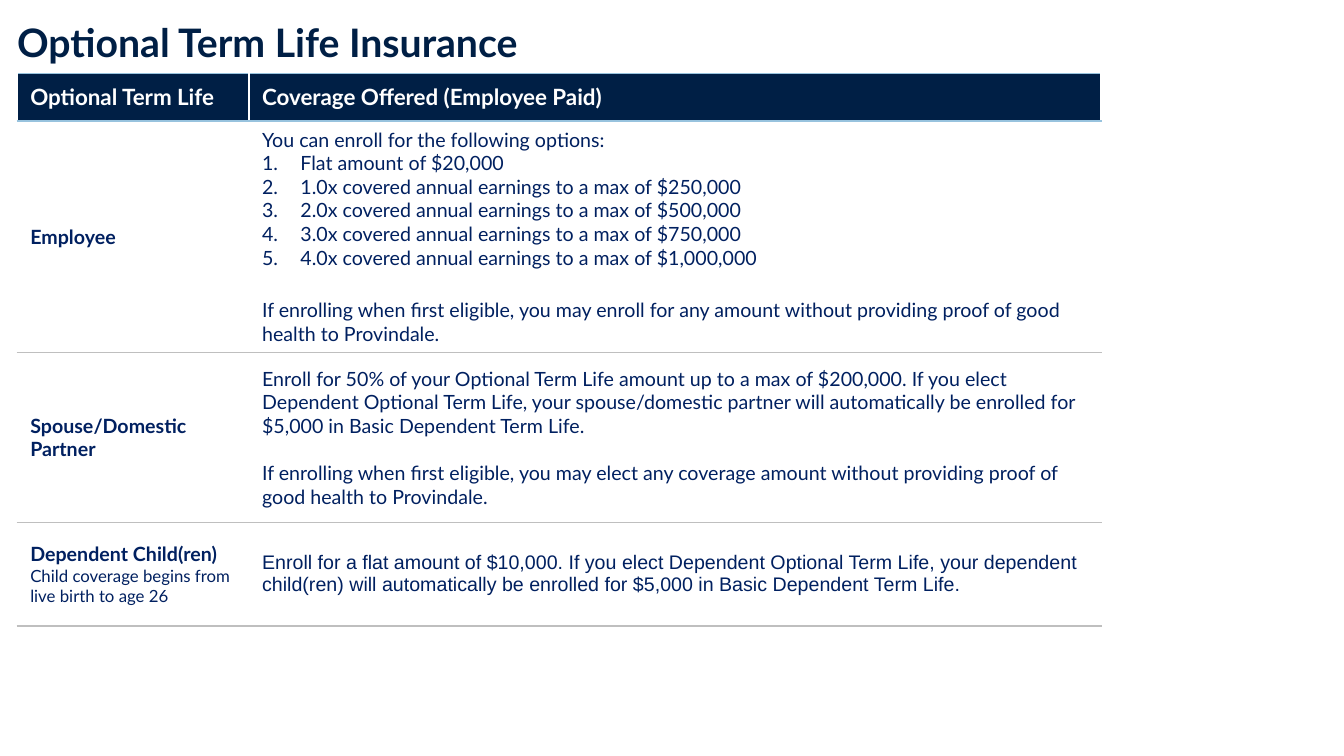
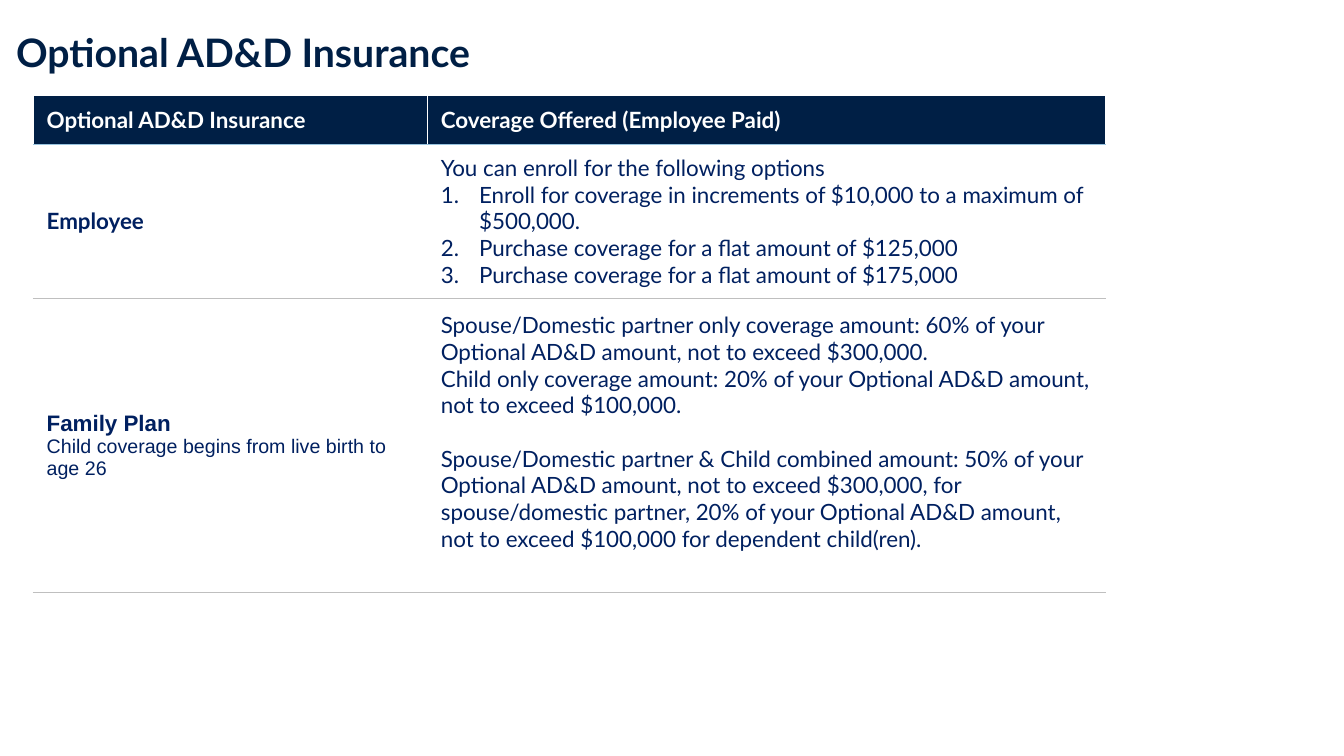
from pptx import Presentation, util as u
from pptx.dml.color import RGBColor
from pptx.enum import text as tx
from pptx.oxml import parse_xml
from pptx.oxml.ns import nsdecls

# Shared style
NAVY, INK, WHITE, SKY, GREY = "001F45", "002060", "FFFFFF", "98C3DE", "BFBFBF"
LATO, ARIAL = "Lato", "Arial"
WIDE, HIGH = u.Inches(13.33), u.Inches(7.5)


def tint(code):
    return RGBColor.from_string(code)


def across(part):
    """Percent of the slide's width."""
    return int(WIDE * part / 100)


def down(part):
    """Percent of the slide's height."""
    return int(HIGH * part / 100)


def write(frame, text, size=14, color=INK, bold=False, font=LATO,
          gap=0, list_item=False, lead=None):
    """Fill the empty first paragraph of a frame, or add one."""
    para = frame.paragraphs[0]
    if para.runs:
        para = frame.add_paragraph()
    if list_item:
        props = para._p.get_or_add_pPr()
        props.set("marL", str(u.Inches(0.38)))
        props.set("indent", str(-u.Inches(0.38)))
        props.append(parse_xml(
            f'<a:buAutoNum {nsdecls("a")} type="arabicPeriod"/>'))
    if gap:
        para.space_before = u.Pt(gap)
    if lead:
        para.line_spacing = lead
    run = para.add_run()
    run.text = text
    face = run.font
    face.name, face.size, face.bold = font, u.Pt(size), bold
    face.color.rgb = tint(color)


def edge(cell, **sides):
    """Draw cell borders; the sides go in the order L, R, T, B."""
    props = cell._tc.get_or_add_tcPr()
    for side in "LRTB":
        if sides.get(side):
            props.append(parse_xml(
                f'<a:ln{side} {nsdecls("a")} w="12700"><a:solidFill>'
                f'<a:srgbClr val="{sides[side]}"/></a:solidFill></a:ln{side}>'))


class Deck:
    def __init__(self):
        self.file = Presentation()
        self.file.slide_width, self.file.slide_height = WIDE, HIGH
        self.slide = None

    def page(self):
        self.slide = self.file.slides.add_slide(self.file.slide_layouts[6])

    def title(self, text, left, base):
        box = self.slide.shapes.add_textbox(
            across(left), 0, across(66.4), down(base))
        frame = box.text_frame
        frame.word_wrap = True
        frame.vertical_anchor = tx.MSO_ANCHOR.BOTTOM
        frame.margin_left = frame.margin_right = 0
        frame.margin_top = frame.margin_bottom = 0
        write(frame, text, size=28, color=NAVY, bold=True, lead=0.85)

    def table(self, left, top, cols, rows, heads, body, rule=None):
        """Each body cell is a list of (text, format) pairs."""
        grid = self.slide.shapes.add_table(
            len(rows), len(cols), across(left), down(top),
            across(sum(cols)), down(sum(rows))).table
        grid.first_row = grid.horz_banding = False
        for col, part in zip(grid.columns, cols):
            col.width = across(part)
        for row, part in zip(grid.rows, rows):
            row.height = down(part)
        # Header row
        for i, head in enumerate(heads):
            sides = {"R": WHITE} if i == 0 else {"L": WHITE}
            cell = grid.cell(0, i)
            edge(cell, T=rule, B=SKY, **sides)
            cell.fill.solid()
            cell.fill.fore_color.rgb = tint(NAVY)
            self.fill(cell, [(head, dict(size=16, color=WHITE, bold=True))])
        # Body rows
        for r, line in enumerate(body, 1):
            for i, paras in enumerate(line):
                cell = grid.cell(r, i)
                edge(cell, T=SKY if r == 1 else GREY, B=GREY)
                cell.fill.background()
                self.fill(cell, paras)
        return grid

    def fill(self, cell, paras):
        cell.vertical_anchor = tx.MSO_ANCHOR.MIDDLE
        cell.margin_left = cell.margin_right = u.Inches(0.13)
        cell.margin_top = cell.margin_bottom = u.Inches(0.07)
        for text, form in paras:
            write(cell.text_frame, text, **form)


def main():
    deck = Deck()
    offer = "Coverage Offered (Employee Paid)"
    birth = "Child coverage begins from live birth to age 26"

    # Term life
    body, strong = dict(size=14), dict(size=14, bold=True)
    item = dict(size=14, list_item=True)
    caps = ["$250,000", "$500,000", "$750,000", "$1,000,000"]
    deck.page()
    deck.table(
        1.28, 9.73, [17.25, 63.39], [6.27, 30.67, 22.4, 13.73],
        ["Optional Term Life", offer],
        [[[("Employee", strong)],
          [("You can enroll for the following options:", body),
           ("Flat amount of $20,000", item),
           *[(f"{n}.0x covered annual earnings to a max of {cap}", item)
             for n, cap in enumerate(caps, 1)],
           ("If enrolling when first eligible, you may enroll for any amount "
            "without providing proof of good health to Provindale.",
            dict(size=14, gap=21))]],
         [[("Spouse/Domestic Partner", strong)],
          [("Enroll for 50% of your Optional Term Life amount up to a max of "
            "$200,000. If you elect Dependent Optional Term Life, your "
            "spouse/domestic partner will automatically be enrolled for "
            "$5,000 in Basic Dependent Term Life.", body),
           ("If enrolling when first eligible, you may elect any coverage "
            "amount without providing proof of good health to Provindale.",
            dict(size=14, gap=17))]],
         [[("Dependent Child(ren)", strong), (birth, dict(size=12))],
          [("Enroll for a flat amount of $10,000. If you elect Dependent "
            "Optional Term Life, your dependent child(ren) will automatically "
            "be enrolled for $5,000 in Basic Dependent Term Life.",
            dict(size=14, font=ARIAL))]]],
        rule=SKY)
    deck.title("Optional Term Life Insurance", 1.28, 8.67)

    # Accident cover
    body, strong = dict(size=16), dict(size=16, bold=True)
    item = dict(size=16, list_item=True)
    deck.page()
    deck.title("Optional AD&D Insurance", 1.2, 10)
    grid = deck.table(
        2.5, 12.67, [29.33, 50.41], [6.4, 20.4, 38.93],
        ["Optional AD&D Insurance", offer],
        [[[("Employee", strong)],
          [("You can enroll for the following options", body),
           ("Enroll for coverage in increments of $10,000 to a maximum of "
            "$500,000.", item),
           *[(f"Purchase coverage for a flat amount of {sum_}", item)
             for sum_ in ("$125,000", "$175,000")]]],
         [[("Family Plan", dict(size=16, bold=True, font=ARIAL)),
           (birth, dict(size=14, font=ARIAL))],
          [("Spouse/Domestic partner only coverage amount: 60% of your "
            "Optional AD&D amount, not to exceed $300,000.", body),
           ("Child only coverage amount: 20% of your Optional AD&D amount, "
            "not to exceed $100,000.", body),
           ("Spouse/Domestic partner & Child combined amount: 50% of your "
            "Optional AD&D amount, not to exceed $300,000, for "
            "spouse/domestic partner, 20% of your Optional AD&D amount, not "
            "to exceed $100,000 for dependent child(ren).",
            dict(size=16, gap=19))]]])
    # The plan text sits a little above the middle
    grid.cell(2, 1).margin_bottom = u.Inches(0.34)

    deck.file.save("out.pptx")


if __name__ == "__main__":
    main()
